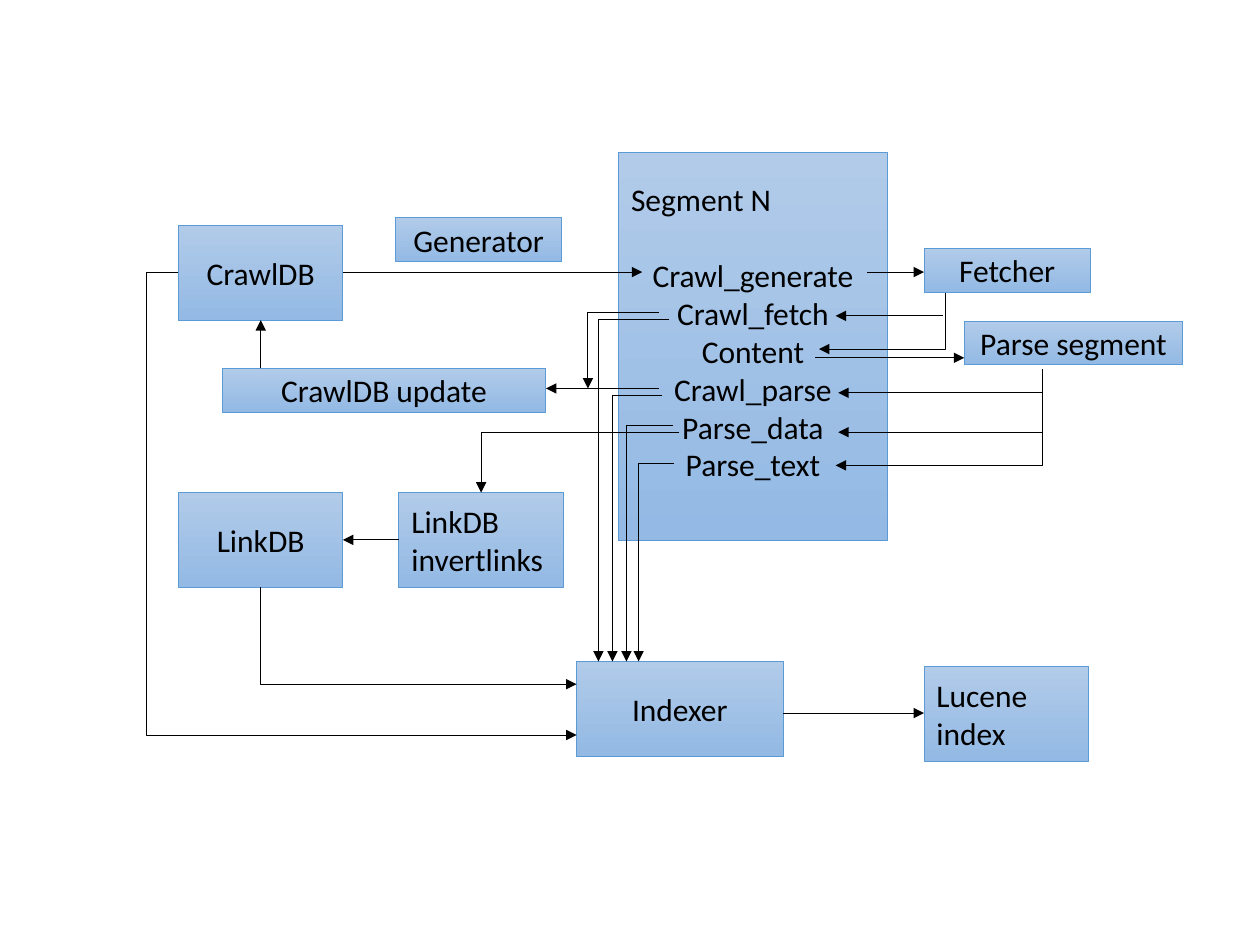
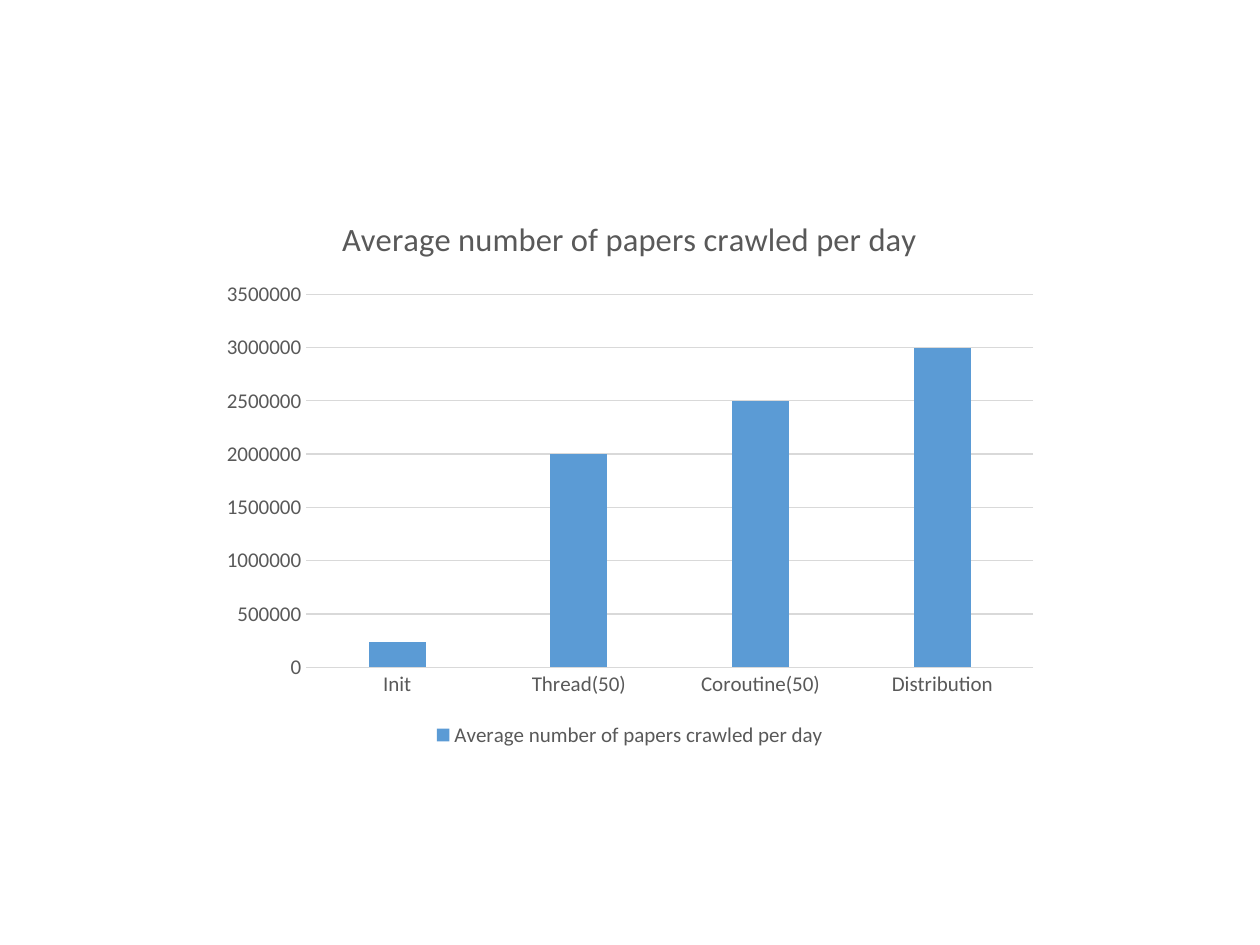
import pptx
import pptx.chart.data
import pptx.dml.color
import pptx.enum.chart
import pptx.enum.shapes
import pptx.enum.text
import pptx.oxml
import pptx.oxml.ns
import pptx.util

Pt = pptx.util.Pt
FONT = "Calibri"
COLORS = {
    "box_top": "B1CBE9",
    "box_bottom": "93B9E4",
    "accent": "5B9BD5",
    "ink": "000000",
    "chart_text": "595959",
    "grid": "D9D9D9",
}

# Label, left, top, width, height in points
STAGES = [
    ("CrawlDB", 102, 129, 94, 54),
    ("Generator", 226, 124.5, 95, 25),
    ("LinkDB", 102, 281.5, 94, 54),
    ("Fetcher", 528, 142, 95, 25),
    ("CrawlDB update", 127, 210.5, 185, 25),
    ("LinkDB\ninvertlinks", 228, 281.5, 94, 54),
    ("Indexer", 329.5, 378, 118, 54),
    ("Lucene\nindex", 528, 381, 94, 54),
    ("Parse segment", 551, 183.5, 125, 25),
]
SEGMENT_PARTS = ["Crawl_generate", "Crawl_fetch", "Content",
                 "Crawl_parse", "Parse_data", "Parse_text"]

# Start x, start y, end x, end y in points; the arrowhead is at the end
STRAIGHT_FLOWS = [
    (196, 155.5, 367, 155.5),    # CrawlDB to Crawl_generate
    (495.5, 155.5, 528, 155.5),  # Crawl_generate to Fetcher
    (376.5, 222, 312, 222),      # Crawl_parse to CrawlDB update
    (228, 308.5, 196, 308.5),    # invertlinks to LinkDB
    (447.5, 407.5, 528, 407.5),  # Indexer to Lucene index
    (149, 210.5, 149, 183),      # CrawlDB update to CrawlDB
    (466, 204.5, 551, 204.5),    # Content to Parse segment
    (595.5, 247, 479, 247),      # Parse segment to Parse_data
    (595.5, 224.5, 479, 224.5),  # Parse segment to Crawl_parse
    (539, 180.5, 477.5, 180.5),  # Fetcher to Crawl_fetch
]
ACROSS_THEN_DOWN = [
    (376.5, 178.5, 336, 222),    # Crawl_fetch to CrawlDB update
    (382.5, 182.5, 342, 378),    # Segment parts to Indexer
    (378.5, 226, 350, 378),
    (384.5, 243, 358, 378),
    (385, 265, 365, 378),
    (388, 247, 275, 281.5),      # Parse_data to invertlinks
]
DOWN_THEN_ACROSS = [
    (149, 335.5, 329.5, 391),    # LinkDB to Indexer
    (595.5, 211, 477.5, 266),    # Parse segment to Parse_text
    (540, 167.5, 468, 199.5),    # Fetcher to Content
]
CRAWLDB_TO_INDEXER = (102, 155.5, 329.5, 420)

PAPERS_TITLE = "Average number of papers crawled per day"
PAPERS_PER_DAY = {"Init": 240000, "Thread(50)": 2000000,
                  "Coroutine(50)": 2500000, "Distribution": 3000000}


def rgb(name):
    return pptx.dml.color.RGBColor.from_string(COLORS[name])


def apply_format(target, values):
    for attribute, value in values.items():
        setattr(target, attribute, value)


def format_font(font, size, color):
    apply_format(font, {"name": FONT, "size": Pt(size), "bold": False})
    font.color.rgb = rgb(color)


def format_line(line, color, width):
    line.color.rgb = rgb(color)
    line.width = Pt(width)


def add_box(slide, lines, left, top, width, height):
    """Gradient box; one line is centred, several start at the left."""
    box = slide.shapes.add_shape(pptx.enum.shapes.MSO_SHAPE.RECTANGLE,
                                 *map(Pt, (left, top, width, height)))
    box.shadow.inherit = False
    box.fill.gradient()
    box.fill.gradient_angle = 270
    for stop, color in zip(box.fill.gradient_stops, ("box_top", "box_bottom")):
        stop.color.rgb = rgb(color)
    format_line(box.line, "accent", 0.5)

    frame = box.text_frame
    apply_format(frame, {
        "word_wrap": True, "margin_top": 0, "margin_bottom": 0,
        "vertical_anchor": pptx.enum.text.MSO_ANCHOR.MIDDLE,
    })
    frame.text = "\n".join(lines)
    align = pptx.enum.text.PP_ALIGN
    for paragraph in frame.paragraphs:
        paragraph.alignment = align.CENTER if len(lines) == 1 else align.LEFT
        format_font(paragraph.font, 18, "ink")
    return frame


def add_segment(slide):
    frame = add_box(slide, ["Segment N", *SEGMENT_PARTS], 353.5, 87, 153.5, 222)
    apply_format(frame, {"vertical_anchor": pptx.enum.text.MSO_ANCHOR.TOP,
                         "margin_top": Pt(16)})
    parts = frame.paragraphs[1:]
    parts[0].space_before = Pt(22)
    for part in parts:
        part.alignment = pptx.enum.text.PP_ALIGN.CENTER


def add_flow(slide, ends, preset="line", arrow="tailEnd", bend=None):
    """Arrow of a preset connector form; bend is the share of its width."""
    flow = slide.shapes.add_connector(
        pptx.enum.shapes.MSO_CONNECTOR.STRAIGHT, *map(Pt, ends))
    format_line(flow.line, "ink", 0.5)
    qn, sub_element = pptx.oxml.ns.qn, pptx.oxml.xmlchemy.OxmlElement
    properties = flow._element.spPr
    geometry = properties.find(qn("a:prstGeom"))
    geometry.set("prst", preset)
    if bend is not None:
        guide = sub_element("a:gd")
        guide.set("name", "adj1")
        guide.set("fmla", f"val {round(bend * 100000)}")
        geometry.find(qn("a:avLst")).append(guide)
    head = sub_element(f"a:{arrow}")
    head.set("type", "triangle")
    properties.find(qn("a:ln")).append(head)
    properties.append(sub_element("a:effectLst"))


def build_crawl_flow(slide):
    add_segment(slide)
    for label, *place in STAGES:
        add_box(slide, label.split("\n"), *place)

    for ends in STRAIGHT_FLOWS:
        add_flow(slide, ends)
    for ends in ACROSS_THEN_DOWN:
        add_flow(slide, ends, "bentConnector2")
    # This form leaves its start sideways, so these run from the arrowhead back
    for x1, y1, x2, y2 in DOWN_THEN_ACROSS:
        add_flow(slide, (x2, y2, x1, y1), "bentConnector2", "headEnd")
    add_flow(slide, CRAWLDB_TO_INDEXER, "bentConnector3", bend=-0.08)


def build_papers_chart(slide):
    enums = pptx.enum.chart
    papers = pptx.chart.data.CategoryChartData()
    papers.categories = list(PAPERS_PER_DAY)
    papers.add_series(PAPERS_TITLE, list(PAPERS_PER_DAY.values()))
    chart = slide.shapes.add_chart(
        enums.XL_CHART_TYPE.COLUMN_CLUSTERED,
        *map(Pt, (120, 110, 480, 320)), papers).chart
    format_font(chart.font, 12, "chart_text")

    # Title and legend
    chart.has_title = True
    heading = chart.chart_title.text_frame
    heading.text = PAPERS_TITLE
    format_font(heading.paragraphs[0].runs[0].font, 18.6, "chart_text")
    chart.has_legend = True
    apply_format(chart.legend, {"position": enums.XL_LEGEND_POSITION.BOTTOM,
                                "include_in_layout": False})
    format_font(chart.legend.font, 12, "chart_text")

    # Columns
    columns = chart.plots[0]
    apply_format(columns, {"gap_width": 219, "overlap": -27,
                           "vary_by_categories": False})
    bars = columns.series[0].format.fill
    bars.solid()
    bars.fore_color.rgb = rgb("accent")

    # Axes
    stages, counts = chart.category_axis, chart.value_axis
    for axis in (stages, counts):
        apply_format(axis, {"major_tick_mark": enums.XL_TICK_MARK.NONE,
                            "minor_tick_mark": enums.XL_TICK_MARK.NONE})
        format_font(axis.tick_labels.font, 12, "chart_text")
    apply_format(counts, {"minimum_scale": 0, "maximum_scale": 3500000,
                          "major_unit": 500000, "has_major_gridlines": True})
    format_line(stages.format.line, "grid", 0.75)
    format_line(counts.major_gridlines.format.line, "grid", 0.75)
    counts.format.line.fill.background()


def main():
    deck = pptx.Presentation()
    apply_format(deck, {"slide_width": Pt(720), "slide_height": Pt(540)})
    blank = deck.slide_layouts[6]
    for build in (build_crawl_flow, build_papers_chart):
        build(deck.slides.add_slide(blank))
    deck.save("out.pptx")


if __name__ == "__main__":
    main()
